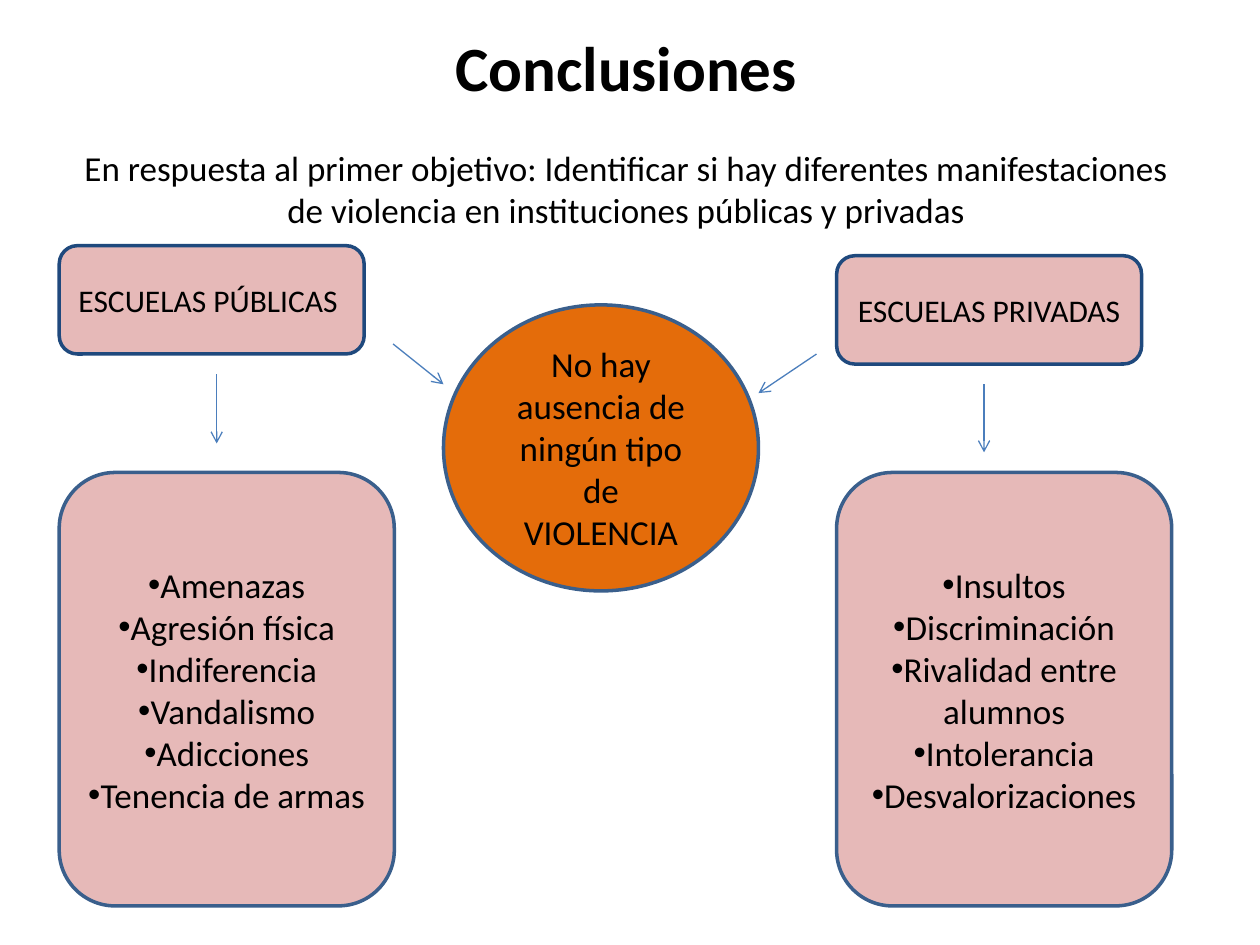
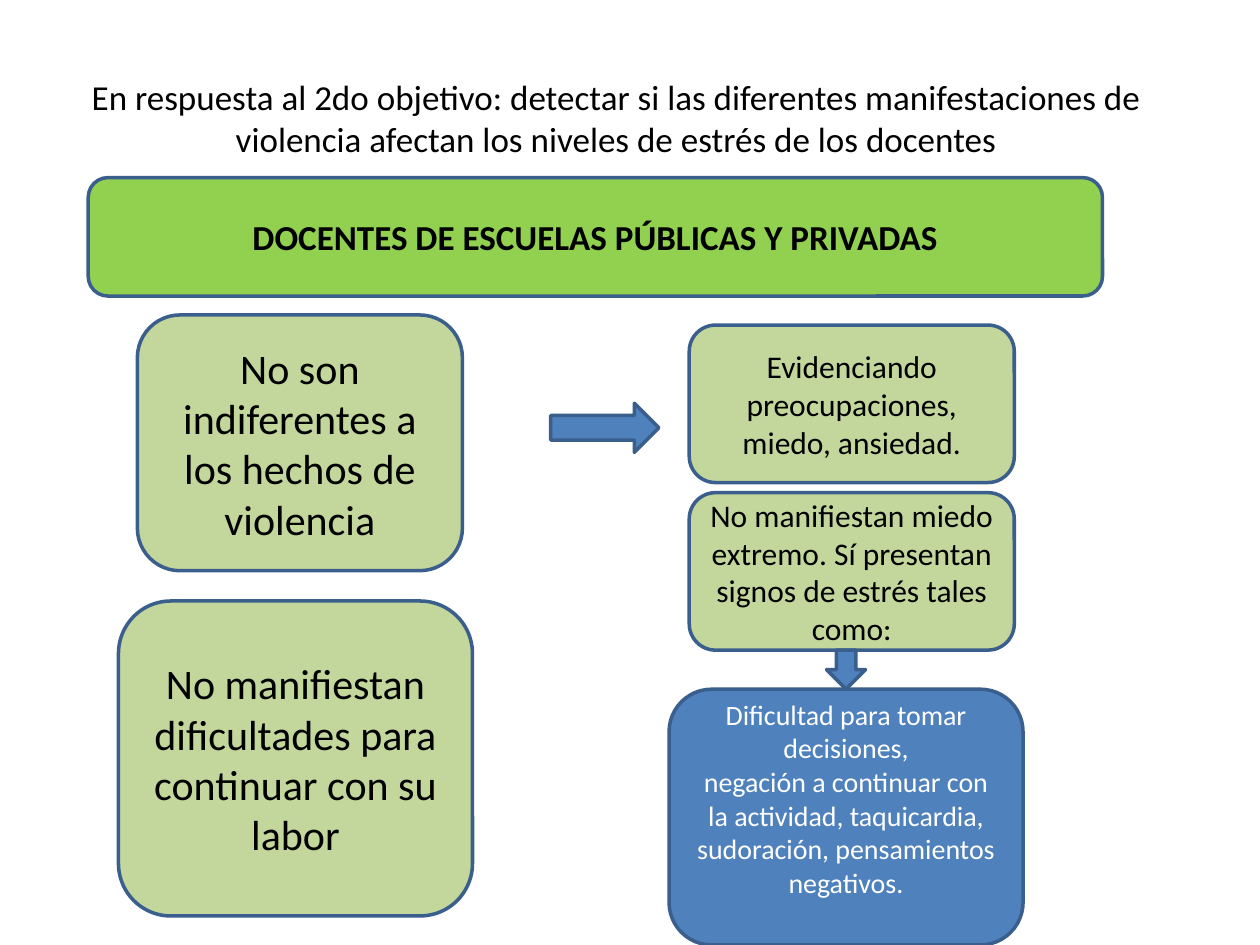
from lxml.etree import SubElement
from pptx import Presentation
from pptx.dml.color import RGBColor
from pptx.enum.shapes import MSO_CONNECTOR as Connector, MSO_SHAPE as Shape
from pptx.enum.text import MSO_ANCHOR as Anchor, MSO_AUTO_SIZE as AutoSize, PP_ALIGN as Align
from pptx.oxml.ns import qn
from pptx.util import Pt

PX = 9144
COLORS = {
    "black": "000000",
    "white": "FFFFFF",
    "outline": "3A5F8C",
    "navy": "1F497D",
    "arrow": "4B7EBC",
    "orange": "E46C0A",
    "pink": "E6B9B8",
    "lime": "92D050",
    "olive": "C3D69B",
    "blue": "4F81BD",
}
COLORS = {name: RGBColor.from_string(value) for name, value in COLORS.items()}
FRAME_FORMAT = {"word_wrap": True, "auto_size": AutoSize.NONE, "vertical_anchor": Anchor.MIDDLE}


def write(shape, paragraphs, size, color="black", bold=False, bullets=False):
    frame = shape.text_frame
    for name, value in FRAME_FORMAT.items():
        setattr(frame, name, value)
    frame.text = "\n".join(paragraphs)
    for paragraph in frame.paragraphs:
        paragraph.alignment = Align.CENTER
        if bullets:
            properties = paragraph._p.get_or_add_pPr()
            properties.set("marL", "0")
            properties.set("indent", "0")
            SubElement(properties, qn("a:buFont"), typeface="Arial")
            SubElement(properties, qn("a:buChar"), char="•")
        font_format = {"name": "Calibri", "size": Pt(size), "bold": bold}
        for name, value in font_format.items():
            setattr(paragraph.font, name, value)
        paragraph.font.color.rgb = COLORS[color]


def add_box(slide, kind, box, fill, line="outline"):
    shape = slide.shapes.add_shape(kind, *[length * PX for length in box])
    shape.shadow.inherit = False
    shape.fill.solid()
    shape.fill.fore_color.rgb = COLORS[fill]
    shape.line.color.rgb = COLORS[line]
    shape.line.width = Pt(2)
    return shape


presentation = Presentation()
presentation.slide_width = 1000 * PX
presentation.slide_height = 750 * PX

TITLES = [
    ((47, 23, 900, 156), [
        "Conclusiones",
        "En respuesta al primer objetivo: Identificar si hay diferentes manifestaciones "
        "de violencia en instituciones públicas y privadas",
    ]),
    ((39, 31, 900, 125), [
        "En respuesta al 2do objetivo: detectar si las diferentes manifestaciones "
        "de violencia afectan los niveles de estrés de los docentes",
    ]),
]
slides = []
for box, paragraphs in TITLES:
    slide = presentation.slides.add_slide(presentation.slide_layouts[5])
    title = slide.shapes.title
    for name, length in zip(("left", "top", "width", "height"), box):
        setattr(title, name, length * PX)
    write(title, paragraphs, 20)
    slides.append(slide)
schools_slide, teachers_slide = slides

title_frame = schools_slide.shapes.title.text_frame
title_frame.vertical_anchor = Anchor.TOP
title_frame.margin_top = 0
heading, objective = title_frame.paragraphs
heading.font.size = Pt(36)
heading.font.bold = True
objective.space_before = Pt(24)

finding = add_box(schools_slide, Shape.OVAL, (352, 242, 250, 227), "orange")
write(finding, ["No hay ausencia de ningún tipo de VIOLENCIA"], 20)

SCHOOLS = [
    (47, 195, "ESCUELAS PÚBLICAS ",
     ["Amenazas", "Agresión física", "Indiferencia", "Vandalismo", "Adicciones", "Tenencia de armas"]),
    (664, 203, "ESCUELAS PRIVADAS",
     ["Insultos", "Discriminación", "Rivalidad entre alumnos", "Intolerancia", "Desvalorizaciones"]),
]
for left, top, name, behaviours in SCHOOLS:
    school = add_box(schools_slide, Shape.ROUNDED_RECTANGLE, (left, top, 242, 86), "pink", "navy")
    write(school, [name], 18)
    behaviour_list = add_box(schools_slide, Shape.ROUNDED_RECTANGLE, (left, 375, 266, 344), "pink")
    write(behaviour_list, behaviours, 20, bullets=True)

ARROWS = [
    (312, 273, 352, 305),
    (648, 281, 602, 312),
    (172, 297, 172, 352),
    (781, 305, 781, 359),
]
for ends in ARROWS:
    arrow = schools_slide.shapes.add_connector(Connector.STRAIGHT, *[end * PX for end in ends])
    arrow.line.color.rgb = COLORS["arrow"]
    arrow.line.width = Pt(0.75)
    properties = arrow._element.spPr
    SubElement(properties.find(qn("a:ln")), qn("a:tailEnd"), type="arrow")
    SubElement(properties, qn("a:effectLst"))

TEACHER_BOXES = [
    ((70, 141, 805, 94), "lime", 20, True, "DOCENTES DE ESCUELAS PÚBLICAS Y PRIVADAS"),
    ((109, 250, 258, 203), "olive", 24, False, "No son indiferentes a los hechos de violencia"),
    ((547, 258, 258, 125), "olive", 18, False, "Evidenciando preocupaciones, miedo, ansiedad."),
    ((94, 477, 281, 250), "olive", 24, False, "No manifiestan dificultades para continuar con su labor"),
    ((547, 391, 258, 125), "olive", 18, False,
     "No manifiestan miedo extremo. Sí presentan signos de estrés tales como:"),
]
for box, fill, size, bold, text in TEACHER_BOXES:
    teacher_box = add_box(teachers_slide, Shape.ROUNDED_RECTANGLE, box, fill)
    write(teacher_box, [text], size, bold=bold)

add_box(teachers_slide, Shape.RIGHT_ARROW, (437, 320, 86, 39), "blue")
symptoms = add_box(teachers_slide, Shape.ROUNDED_RECTANGLE, (531, 547, 281, 203), "blue")
write(symptoms, [
    "Dificultad para tomar decisiones,",
    "negación a continuar con la actividad, taquicardia, sudoración, pensamientos negativos.",
], 16, "white")
symptoms.text_frame.margin_bottom = 35 * PX
add_box(teachers_slide, Shape.DOWN_ARROW, (656, 516, 31, 31), "blue")

presentation.save("out.pptx")
